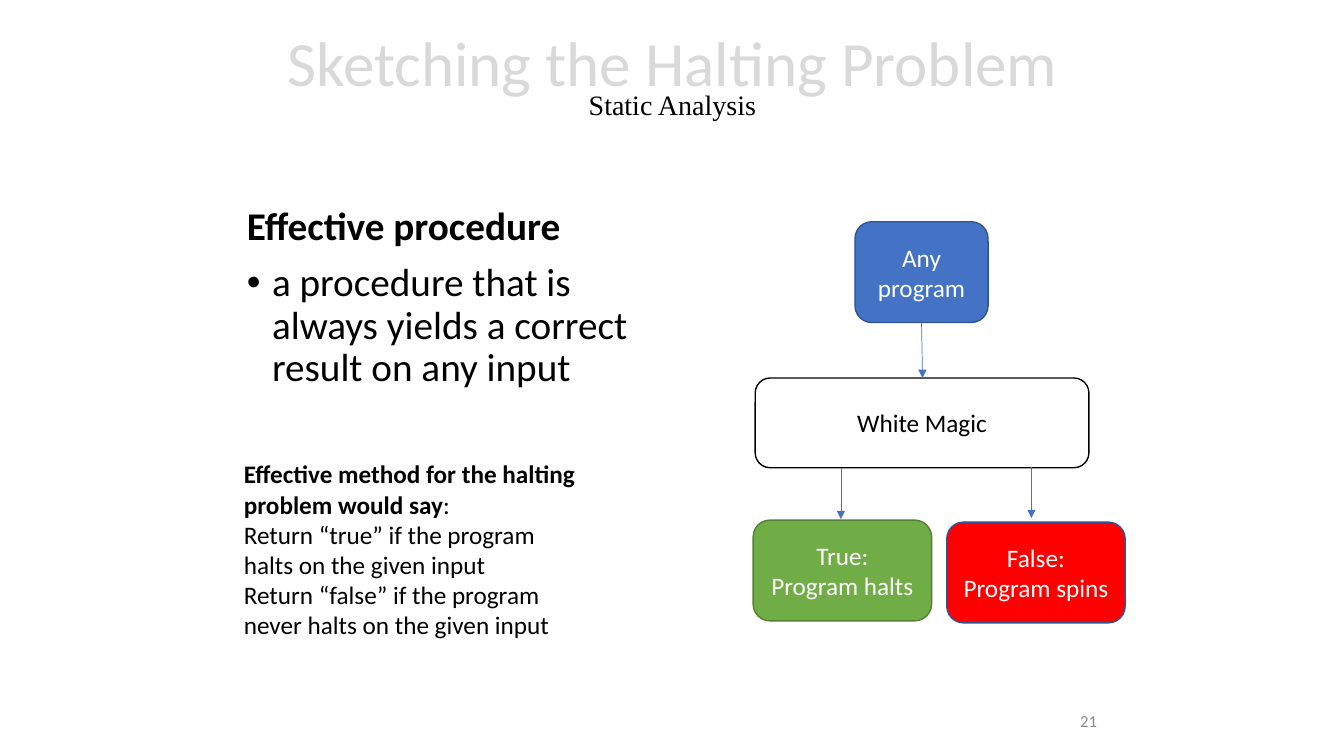
from lxml import etree
from pptx import Presentation
from pptx.dml.color import RGBColor
from pptx.enum import shapes, text
from pptx.oxml import ns
from pptx.util import Inches, Pt

BLACK, WHITE, BLUE, NAVY = "000000", "FFFFFF", "4472C4", "325491"
LEFT, CENTER, RIGHT = text.PP_ALIGN.LEFT, text.PP_ALIGN.CENTER, text.PP_ALIGN.RIGHT
TOP, MIDDLE = text.MSO_ANCHOR.TOP, text.MSO_ANCHOR.MIDDLE

# Content: a paragraph is a list of (text, run format) pairs
TITLE = [[("Sketching the Halting Problem\v", dict(size=45, color="D9D9D9")),
          ("Static Analysis", dict(size=20, font="Times New Roman"))]]
DEFINITION = [
    [("Effective procedure", dict(size=28, bold=True))],
    [("a procedure that is always yields a correct result on any input", dict(size=28))],
]
METHOD = [
    [("Effective method for the halting problem would say", dict(bold=True)), (":", {})],
    [("Return “true” if the program halts on the given input", {})],
    [("Return “false” if the program never halts on the given input", {})],
]
PAGE_NUMBER = [[("21", dict(size=12, color="8C8C8C"))]]

# Flowchart steps: lines, (left, top, width, height), fill, outline, text colour
STEPS = [
    (["White Magic"], (7.49, 3.75, 3.31, 0.89), WHITE, BLACK, BLACK),
    (["Any program"], (8.48, 2.2, 1.32, 1), BLUE, NAVY, WHITE),
    (["True:", "Program halts"], (7.47, 5.16, 1.77, 1), "70AD47", "538035", WHITE),
    (["False:", "Program spins"], (9.39, 5.18, 1.77, 1), "FF0000", NAVY, WHITE),
]
# Arrows: start x, start y, end x, end y
ARROWS = [(9.14, 3.2, 9.15, 3.75), (8.34, 4.64, 8.34, 5.15), (10.23, 4.63, 10.23, 5.14)]

deck = Presentation()
deck.slide_width, deck.slide_height = Inches(13.33), Inches(7.5)
slide = deck.slides.add_slide(deck.slide_layouts[6])


def rgb(value):
    return RGBColor.from_string(value)


def write(holder, paragraphs, align=LEFT, anchor=TOP, spacing=None, before=0):
    """Fill a shape or text box with formatted paragraphs."""
    frame = holder.text_frame
    frame.word_wrap, frame.vertical_anchor = True, anchor
    for index, runs in enumerate(paragraphs):
        paragraph = frame.paragraphs[0] if index == 0 else frame.add_paragraph()
        paragraph.alignment = align
        paragraph.space_before = Pt(before)
        if spacing:
            paragraph.line_spacing = spacing
        for words, style in runs:
            run = paragraph.add_run()
            run.text = words.rstrip("\v")
            if words.endswith("\v"):
                paragraph.add_line_break()
            run.font.name = style.get("font", "Calibri")
            run.font.size = Pt(style.get("size", 18))
            run.font.bold = style.get("bold", False)
            run.font.color.rgb = rgb(style.get("color", BLACK))
    return frame


def add_text(box, paragraphs, **layout):
    return write(slide.shapes.add_textbox(*map(Inches, box)), paragraphs, **layout)


def add_bullet(paragraph, indent):
    properties = paragraph._p.get_or_add_pPr()
    properties.set("marL", str(Inches(indent)))
    properties.set("indent", str(-Inches(indent)))
    etree.SubElement(properties, ns.qn("a:buFont"), typeface="Arial")
    etree.SubElement(properties, ns.qn("a:buChar"), char="•")


# Text blocks
add_text((1.67, 0.09, 10, 1.45), TITLE, align=CENTER, anchor=MIDDLE, spacing=0.7)
definition = add_text((2.35, 2, 4.5, 4.76), DEFINITION, spacing=0.9, before=10)
add_bullet(definition.paragraphs[1], 0.25)
add_text((8.73, 6.95, 2.25, 0.4), PAGE_NUMBER, align=RIGHT, anchor=MIDDLE)
add_text((2.32, 4.5, 3.49, 1.92), METHOD)

# Flowchart steps
for lines, box, fill, outline, color in STEPS:
    step = slide.shapes.add_shape(shapes.MSO_SHAPE.ROUNDED_RECTANGLE, *map(Inches, box))
    step.shadow.inherit = False
    step.fill.solid()
    step.fill.fore_color.rgb = rgb(fill)
    step.line.color.rgb = rgb(outline)
    step.line.width = Pt(1)
    write(step, [[(line, dict(color=color))] for line in lines], align=CENTER, anchor=MIDDLE)

# Arrows
for ends in ARROWS:
    arrow = slide.shapes.add_connector(shapes.MSO_CONNECTOR.STRAIGHT, *map(Inches, ends))
    arrow.line.color.rgb = rgb(BLUE)
    arrow.line.width = Pt(0.5)
    etree.SubElement(arrow.line._get_or_add_ln(), ns.qn("a:tailEnd"), type="triangle")
    etree.SubElement(arrow._element.spPr, ns.qn("a:effectLst"))

deck.save("out.pptx")
